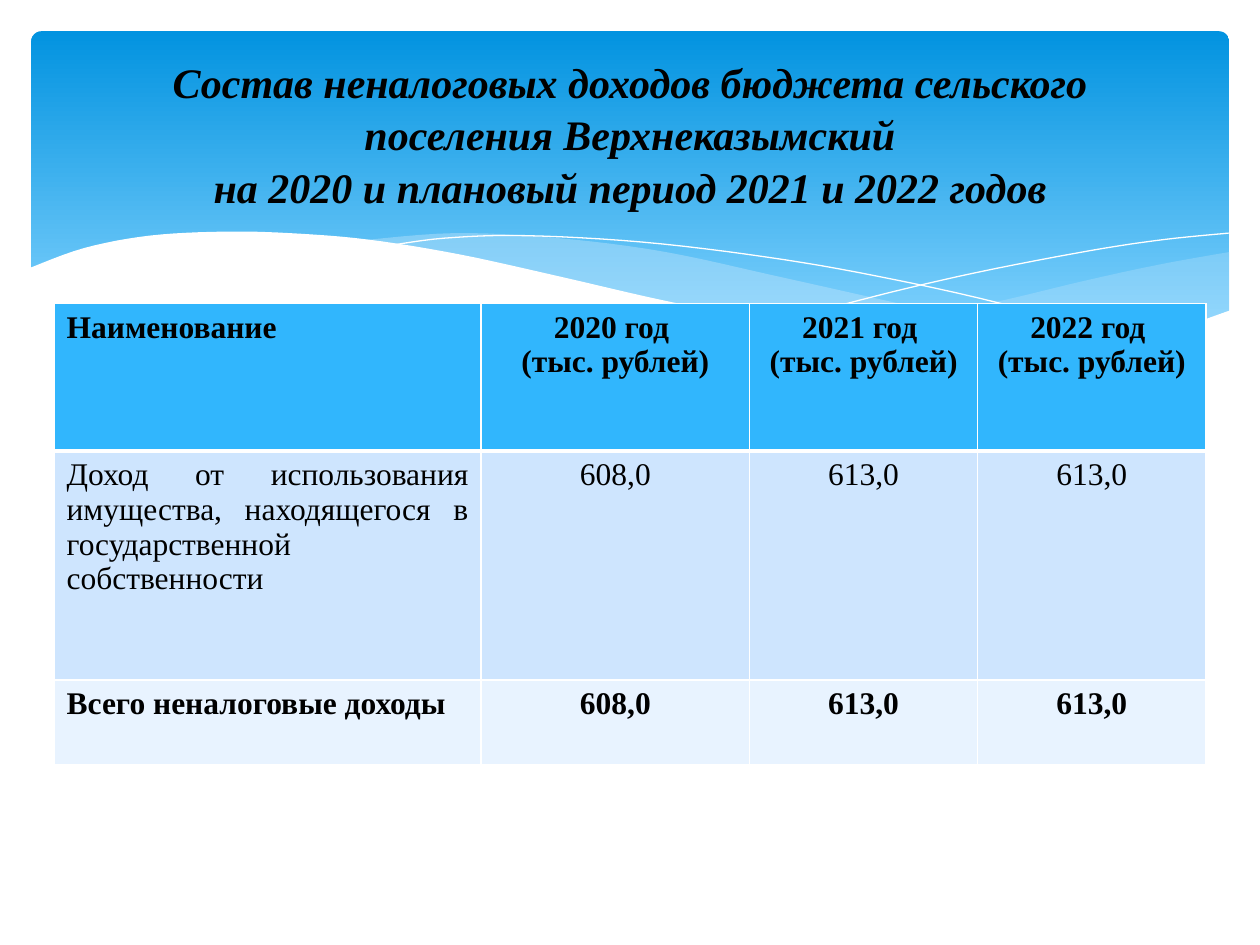
import pptx
import pptx.util
import pptx.dml.color
import pptx.enum.shapes
import pptx.enum.text
import pptx.oxml
import pptx.oxml.ns
import lxml.etree

Cm, Pt = pptx.util.Cm, pptx.util.Pt
ALIGN = pptx.enum.text.PP_ALIGN

TITLE = ("Состав неналоговых доходов бюджета сельского поселения "
         "Верхнеказымский\vна 2020 и плановый период 2021 и 2022 годов")
ROWS = [
    ["Наименование"] + [f"{year} год \n(тыс. рублей)" for year in (2020, 2021, 2022)],
    ["Доход от использования имущества, находящегося в государственной собственности",
     "608,0", "613,0", "613,0"],
    ["Всего неналоговые доходы", "608,0", "613,0", "613,0"],
]
COLUMN_WIDTHS = [8.61, 5.41, 4.6, 4.6]
ROW_HEIGHTS = [2.97, 4.62, 1.7]
ROW_FILLS = ["31B6FD", "CEE5FE", "E8F3FF"]
ROW_BOLD = [True, False, True]
FIRST_COLUMN_ALIGN = [ALIGN.LEFT, ALIGN.JUSTIFY, ALIGN.LEFT]
THIN, THICK = 1, 3
FONT = {"name": "Times New Roman"}

VEILS = [
    {"curves": [
        [(24.79, 5.08), (23.39, 5.33), (21.87, 5.66), (19.79, 6.15), (16.79, 6.73)],
        [(16.79, 6.73), (18.59, 6.96), (20.4, 7.06), (22.15, 6.96), (23.57, 6.68),
         (24.79, 6.27)]],
     "fill": "C6E7FC", "alpha": 29},
    {"curves": [
        [(22.68, 6.93), (19.69, 6.45), (15.98, 5.64), (13.41, 5.08), (11.23, 4.8),
         (9.17, 4.7), (7.26, 4.85)],
        [(7.26, 4.85), (9.19, 5.16), (11.4, 5.64), (14.38, 6.3), (16.89, 6.76),
         (19, 7.01), (20.78, 7.06), (22.68, 6.93)]],
     "fill": "C6E7FC", "alpha": 40},
    {"curves": [
        [(7.85, 4.95), (8.97, 4.8), (10.57, 4.75), (12.95, 4.88), (15.44, 5.18),
         (17.65, 5.56), (20.19, 6.12), (23.04, 6.91)]],
     "line": "FFFFFF"},
    {"curves": [
        [(15.57, 6.53), (17.65, 5.97), (19.71, 5.49), (22, 5.05), (23.47, 4.83),
         (24.77, 4.7)]],
     "line": "FFFFFF"},
    {"curves": [
        [(24.82, 6.25), (23.62, 6.65), (22.23, 6.93), (20.55, 7.04), (18.44, 6.91),
         (15.9, 6.55), (13.44, 6.07), (11.35, 5.59), (9.27, 5.13), (7.42, 4.83),
         (5.84, 4.7), (4.5, 4.67), (3.02, 4.75), (1.7, 5), (0.58, 5.41)],
        [(0.58, 8.36), (24.82, 8.36)]],
     "fill": "FFFFFF", "alpha": 100},
]


def color(value):
    return pptx.dml.color.RGBColor.from_string(value)


def format_text(tf, align, **font):
    for p in tf.paragraphs:
        p.alignment = align
        for r in p.runs:
            r.font.color.rgb = color("000000")
            for name, value in {**FONT, **font}.items():
                setattr(r.font, name, value)


def smooth(points, steps=6):
    if len(points) < 3:
        return points
    ends = [points[0], *points, points[-1]]
    result = [points[0]]
    for a, b, c, d in zip(ends, ends[1:], ends[2:], ends[3:]):
        for i in range(1, steps + 1):
            t = i / steps
            result.append(tuple(
                (2 * q + (r - o) * t + (2 * o - 5 * q + 4 * r - u) * t ** 2
                 + (3 * q - o - 3 * r + u) * t ** 3) / 2
                for o, q, r, u in zip(a, b, c, d)))
    return result


def add_veil(s, curves, fill=None, alpha=100, line=None):
    points = [(Cm(x), Cm(y)) for curve in curves for x, y in smooth(curve)]
    builder = s.shapes.build_freeform(*points[0])
    builder.add_line_segments(points[1:], close=fill is not None)
    sp = builder.convert_to_shape()
    sp.shadow.inherit = False
    if fill:
        sp.fill.solid()
        sp.fill.fore_color.rgb = color(fill)
        rgb = sp.fill._xPr.find(".//" + pptx.oxml.ns.qn("a:srgbClr"))
        lxml.etree.SubElement(rgb, pptx.oxml.ns.qn("a:alpha"), val=str(alpha * 1000))
    else:
        sp.fill.background()
    if line:
        sp.line.color.rgb = color(line)
        sp.line.width = Pt(0)
    else:
        sp.line.fill.background()


def add_header(s):
    sp = s.shapes.add_shape(pptx.enum.shapes.MSO_SHAPE.ROUNDED_RECTANGLE,
                            Cm(0.63), Cm(0.63), Cm(24.15), Cm(6.86))
    sp.adjustments[0] = 0.03
    sp.shadow.inherit = False
    sp.line.fill.background()
    sp.fill.gradient()
    sp.fill.gradient_angle = 270
    for stop, (position, value) in zip(sp.fill.gradient_stops,
                                       [(0, "0293E0"), (0.9, "83D3FE")]):
        stop.position = position
        stop.color.rgb = color(value)


def add_borders(cell, widths):
    for side, width in zip("LRTB", widths):
        cell._tc.get_or_add_tcPr().append(pptx.oxml.parse_xml(
            f'<a:ln{side} {pptx.oxml.ns.nsdecls("a")} w="{Pt(width)}"><a:solidFill>'
            f'<a:srgbClr val="FFFFFF"/></a:solidFill></a:ln{side}>'))


def add_income_table(s):
    table = s.shapes.add_table(len(ROWS), len(COLUMN_WIDTHS), Cm(1.09), Cm(6.12),
                               Cm(sum(COLUMN_WIDTHS)), Cm(sum(ROW_HEIGHTS))).table
    for column, width in zip(table.columns, COLUMN_WIDTHS):
        column.width = Cm(width)
    for i, texts in enumerate(ROWS):
        table.rows[i].height = Cm(ROW_HEIGHTS[i])
        for j, text in enumerate(texts):
            cell = table.cell(i, j)
            cell.text = text
            add_borders(cell, [THIN, THIN, THICK if i == 1 else THIN,
                               THICK if i == 0 else THIN])
            cell.fill.solid()
            cell.fill.fore_color.rgb = color(ROW_FILLS[i])
            format_text(cell.text_frame, ALIGN.CENTER if j else FIRST_COLUMN_ALIGN[i],
                        size=Pt(18), bold=ROW_BOLD[i])


def add_title(s):
    tf = s.shapes.add_textbox(Cm(1.27), Cm(0.94), Cm(22.86), Cm(3.48)).text_frame
    tf.word_wrap = True
    tf.vertical_anchor = pptx.enum.text.MSO_ANCHOR.MIDDLE
    tf.text = TITLE
    tf.paragraphs[0].line_spacing = 1.05
    format_text(tf, ALIGN.CENTER, size=Pt(24), bold=True, italic=True)


def main():
    prs = pptx.Presentation()
    prs.slide_width, prs.slide_height = Cm(25.4), Cm(19.05)
    s = prs.slides.add_slide(prs.slide_layouts[6])
    add_header(s)
    for veil in VEILS:
        add_veil(s, **veil)
    add_income_table(s)
    add_title(s)
    prs.save("out.pptx")


if __name__ == "__main__":
    main()
